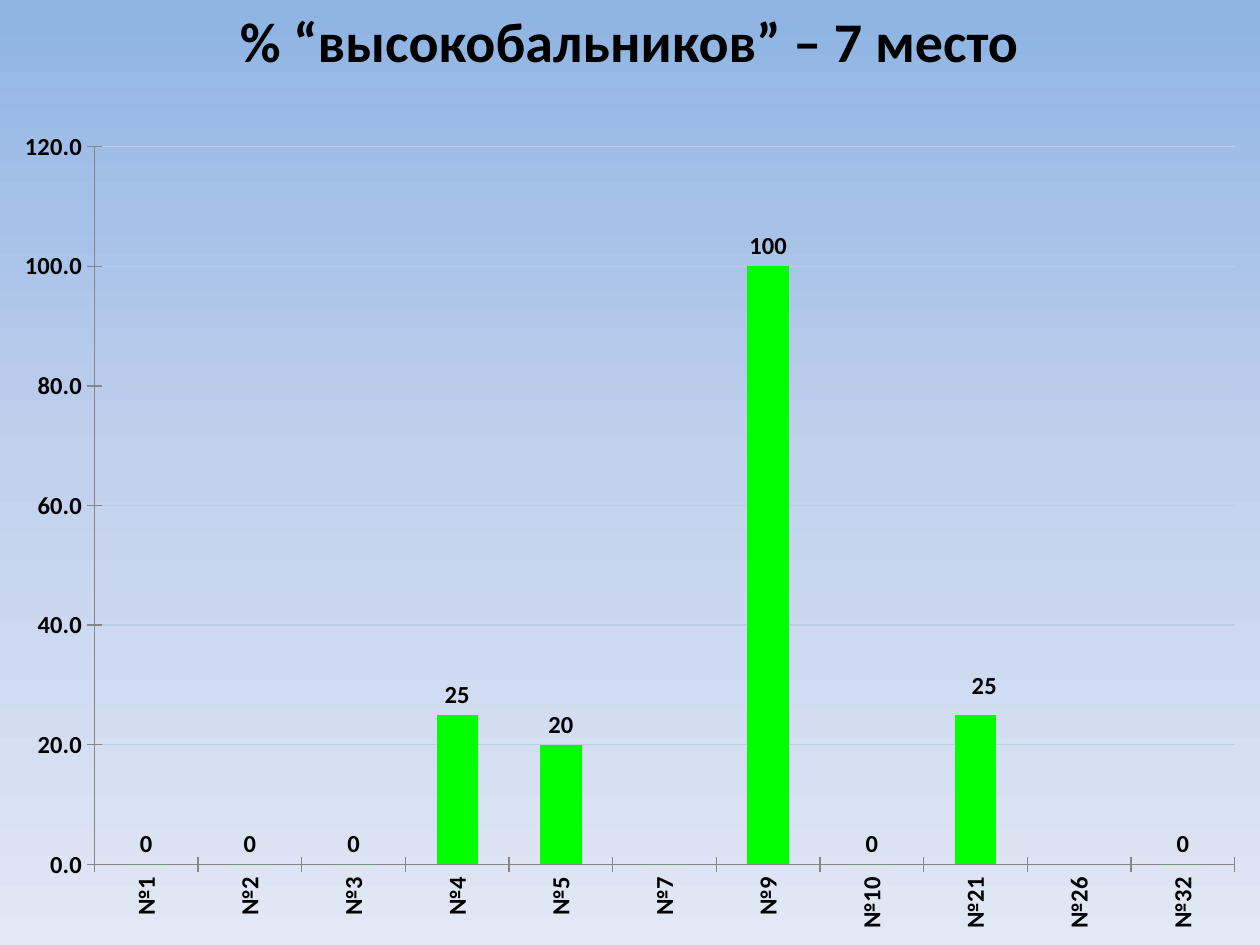
import copy

import pptx
import pptx.chart.data
import pptx.dml.color
import pptx.enum.chart
import pptx.enum.text
import pptx.oxml
import pptx.oxml.ns
import pptx.util
from pptx.util import Cm

CHART_NS = pptx.oxml.ns.nsdecls("c")
FONT = "Calibri"


def rgb(value):
    return pptx.dml.color.RGBColor.from_string(value)


def style_font(font, size):
    font.name = FONT
    font.size = pptx.util.Pt(size)
    font.bold = True
    font.color.rgb = rgb("000000")


deck = pptx.Presentation()
deck.slide_width, deck.slide_height = Cm(25.4), Cm(19.05)
page = deck.slides.add_slide(deck.slide_layouts[5])

# Background: three-stop gradient from top to bottom
fill = page.background.fill
fill.gradient()
fill.gradient_angle = 270
stop_list = page.element.find(".//" + pptx.oxml.ns.qn("a:gsLst"))
stop_list.insert(1, copy.deepcopy(stop_list[0]))
stops = [(0, "8EB4E3"), (0.5, "C2D1ED"), (1, "E1E8F5")]
for stop, (position, color) in zip(fill.gradient_stops, stops):
    stop.position = position
    stop.color.rgb = rgb(color)

# Title
title = page.shapes.title
title.left, title.top, title.width, title.height = Cm(4.5), Cm(0), Cm(16.38), Cm(1.63)
frame = title.text_frame
frame.text = "% “высокобальников” – 7 место"
frame.word_wrap = False
frame.vertical_anchor = pptx.enum.text.MSO_ANCHOR.MIDDLE
para = frame.paragraphs[0]
para.alignment = pptx.enum.text.PP_ALIGN.CENTER
style_font(para.font, 32)

# Column chart
data = pptx.chart.data.CategoryChartData()
data.categories = [f"№{n}" for n in (1, 2, 3, 4, 5, 7, 9, 10, 21, 26, 32)]
data.add_series("Series 1", [0, 0, 0, 25, 20, 0, 100, 0, 25, None, 0])
chart = page.shapes.add_chart(
    pptx.enum.chart.XL_CHART_TYPE.COLUMN_CLUSTERED,
    Cm(0), Cm(2.34), Cm(25.4), Cm(16.71), data,
).chart
chart.has_title = False
chart.has_legend = False
chart.font.name = FONT
chart.font.size = pptx.util.Pt(10)
plot = chart.plots[0]
plot.gap_width = 150
plot.vary_by_categories = False
series = plot.series[0]
series.format.fill.solid()
series.format.fill.fore_color.rgb = rgb("00FF00")

# Axes
for axis in (chart.category_axis, chart.value_axis):
    axis.major_tick_mark = pptx.enum.chart.XL_TICK_MARK.CROSS
    axis.minor_tick_mark = pptx.enum.chart.XL_TICK_MARK.NONE
    axis.format.line.color.rgb = rgb("868686")
    axis.format.line.width = pptx.util.Pt(0.75)
    style_font(axis.tick_labels.font, 14)
names = chart.category_axis._element.find(".//" + pptx.oxml.ns.qn("a:bodyPr"))
names.set("rot", "-5400000")
names.set("vert", "horz")
scale = chart.value_axis
scale.minimum_scale, scale.maximum_scale, scale.major_unit = 0, 120, 20
scale.tick_labels.number_format = "0.0"
scale.tick_labels.number_format_is_linked = False
scale.has_major_gridlines = True
scale.major_gridlines.format.line.color.rgb = rgb("B9CDE5")
scale.major_gridlines.format.line.width = pptx.util.Pt(0.75)

# Plot area position as shares of the chart frame
plot_area = chart._chartSpace.chart.plotArea
for layout in plot_area.findall(pptx.oxml.ns.qn("c:layout")):
    plot_area.remove(layout)
plot_area.insert(0, pptx.oxml.parse_xml(
    f'<c:layout {CHART_NS}><c:manualLayout><c:layoutTarget val="inner"/>'
    '<c:xMode val="edge"/><c:yMode val="edge"/><c:x val="0.075"/><c:y val="0.037"/>'
    '<c:w val="0.905"/><c:h val="0.866"/></c:manualLayout></c:layout>'))

# Value labels: none for №7, a shifted one for №21
labels = series.data_labels
labels.show_value = True
labels.number_format = "General"
labels.number_format_is_linked = False
labels.position = pptx.enum.chart.XL_LABEL_POSITION.OUTSIDE_END
style_font(labels.font, 14)
hidden = '<c:delete val="1"/>'
shifted = (
    '<c:layout><c:manualLayout><c:x val="0.007"/><c:y val="-0.011"/></c:manualLayout></c:layout>'
    '<c:dLblPos val="outEnd"/><c:showLegendKey val="0"/><c:showVal val="1"/>'
    '<c:showCatName val="0"/><c:showSerName val="0"/><c:showPercent val="0"/>'
    '<c:showBubbleSize val="0"/>')
for place, (index, content) in enumerate([(5, hidden), (8, shifted)]):
    labels._element.insert(place, pptx.oxml.parse_xml(
        f'<c:dLbl {CHART_NS}><c:idx val="{index}"/>{content}</c:dLbl>'))
style_font(series.points[8].data_label.font, 14)

deck.save("out.pptx")
